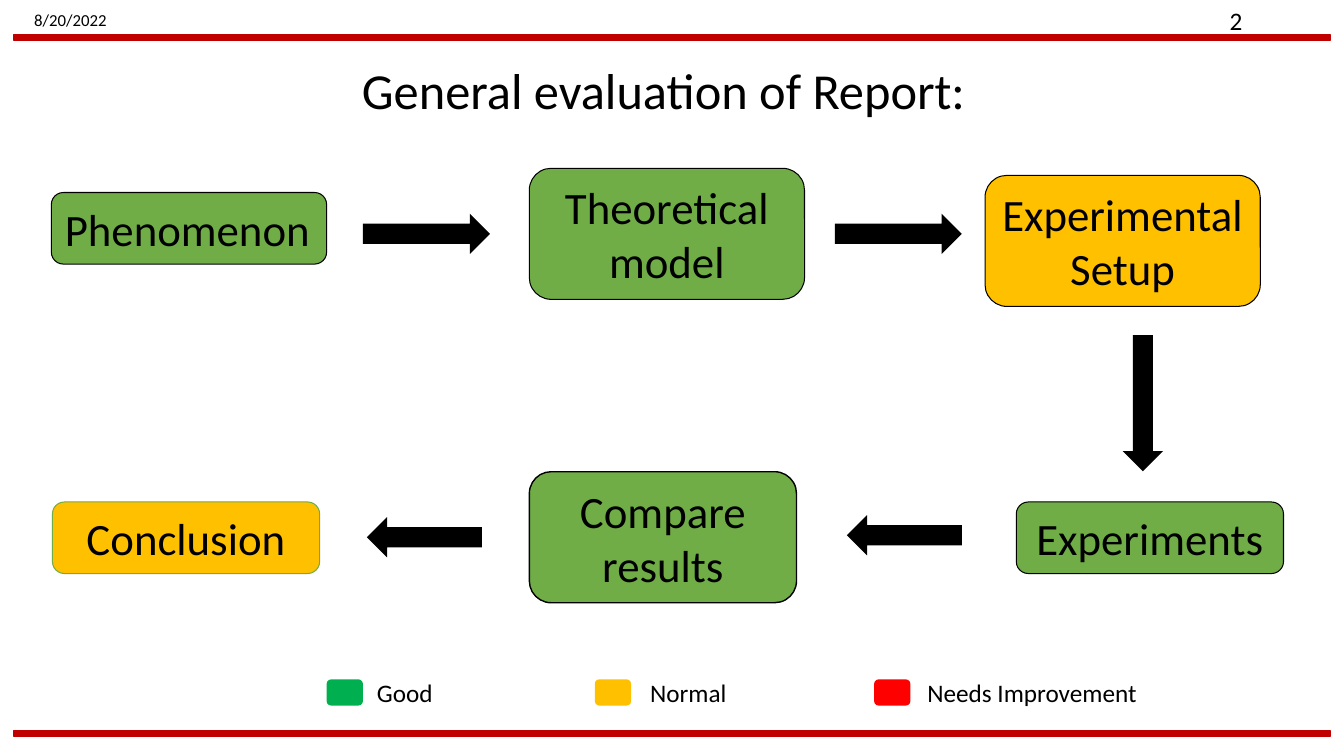
from pptx import Presentation
from pptx.dml.color import RGBColor
from pptx.enum.shapes import MSO_SHAPE
from pptx.enum.text import MSO_ANCHOR, MSO_AUTO_SIZE, PP_ALIGN
from pptx.util import Inches, Pt

HUES = {"black": "000000", "bar": "C00000", "green": "70AD47",
        "good": "00B050", "amber": "FFC000", "red": "FF0000"}
FONT = "Calibri"


def hue(name):
    return RGBColor.from_string(HUES[name])


def write(frame, text, size, align=PP_ALIGN.LEFT, wrap=True, grow=False):
    frame.word_wrap = wrap
    frame.auto_size = MSO_AUTO_SIZE.SHAPE_TO_FIT_TEXT if grow else MSO_AUTO_SIZE.NONE
    frame.vertical_anchor = MSO_ANCHOR.MIDDLE
    para = frame.paragraphs[0]
    para.alignment = align
    run = para.add_run()
    run.text = text
    run.font.size = Pt(size)
    run.font.name = FONT
    run.font.color.rgb = hue("black")


def label(slide, box, text, size, **style):
    area = slide.shapes.add_textbox(*map(Inches, box))
    write(area.text_frame, text, size, **style)


def block(slide, kind, box, fill, line=None, width=0.75):
    shape = slide.shapes.add_shape(kind, *map(Inches, box))
    shape.shadow.inherit = False
    shape.fill.solid()
    shape.fill.fore_color.rgb = hue(fill)
    if line:
        shape.line.color.rgb = hue(line)
        shape.line.width = Pt(width)
    else:
        shape.line.fill.background()
    return shape


# Red bars, date and page number
def frame(slide, left, top, width, height):
    for y in (top, top + height - 0.06):
        block(slide, MSO_SHAPE.RECTANGLE, (left, y, width, 0.06), "bar", "bar", 1)
    label(slide, (left + 0.1, 0, 3, 0.4), "8/20/2022", 12)
    label(slide, (left + 9.28, 0, 3, 0.4), "2", 18, align=PP_ALIGN.RIGHT)


# Slide title
def head(slide, *box):
    title = slide.shapes.title
    title.left, title.top, title.width, title.height = map(Inches, box)
    write(title.text_frame, "General evaluation of Report:", 36, wrap=False, grow=True)


# Six steps, read clockwise, with arrows between them
def flow(slide, left, top):
    arrows = [  # x, y, length, turn
        (3.09, 0.45, 1.26, 0), (7.77, 0.45, 1.26, 0), (10.15, 2.13, 1.35, 90),
        (7.89, 3.44, 1.14, 180), (3.13, 3.46, 1.14, 180)]
    for x, y, size, turn in arrows:
        arrow = block(slide, MSO_SHAPE.RIGHT_ARROW,
                      (left + x, top + y, size, 0.4), "black")
        arrow.rotation = turn

    mid = PP_ALIGN.CENTER
    steps = [  # text, x, y, width, height, fill, line, line width, alignment
        ("Phenomenon", 0, 0.24, 2.73, 0.71, "green", "black", 0.75, PP_ALIGN.LEFT),
        ("Theoretical model", 4.74, 0, 2.73, 1.3, "green", "black", 0.75, mid),
        ("Experimental Setup", 9.26, 0.07, 2.73, 1.3, "amber", "black", 0.75, mid),
        ("Experiments", 9.57, 3.31, 2.65, 0.71, "green", "black", 0.75, mid),
        ("Compare results", 4.74, 3.01, 2.65, 1.3, "green", "black", 1, mid),
        ("Conclusion", 0.01, 3.31, 2.65, 0.71, "amber", "green", 0.75, mid)]
    for text, x, y, width, height, fill, line, stroke, align in steps:
        step = block(slide, MSO_SHAPE.FLOWCHART_ALTERNATE_PROCESS,
                     (left + x, top + y, width, height), fill, line, stroke)
        write(step.text_frame, text, 32, align=align, grow=True)


# Colour key
def legend(slide, left, top):
    keys = [  # text, fill, swatch x, text x, text width
        ("Good", "good", 0, 0.4, 0.76),
        ("Normal", "amber", 2.66, 3.11, 0.97),
        ("Needs Improvement", "red", 5.43, 5.86, 2.3)]
    for text, fill, x, start, width in keys:
        block(slide, MSO_SHAPE.ROUNDED_RECTANGLE,
              (left + x, top + 0.07, 0.36, 0.26), fill)
        label(slide, (left + start, top, width, 0.4), text, 18, wrap=False, grow=True)


def main():
    deck = Presentation()
    deck.slide_width, deck.slide_height = Inches(13.33), Inches(7.5)
    slide = deck.slides.add_slide(deck.slide_layouts[5])
    frame(slide, 0.14, 0.34, 13.05, 6.97)
    head(slide, 3.49, 0.53, 6.24, 0.71)
    flow(slide, 0.51, 1.67)
    legend(slide, 3.24, 6.67)
    deck.save("out.pptx")


if __name__ == "__main__":
    main()
